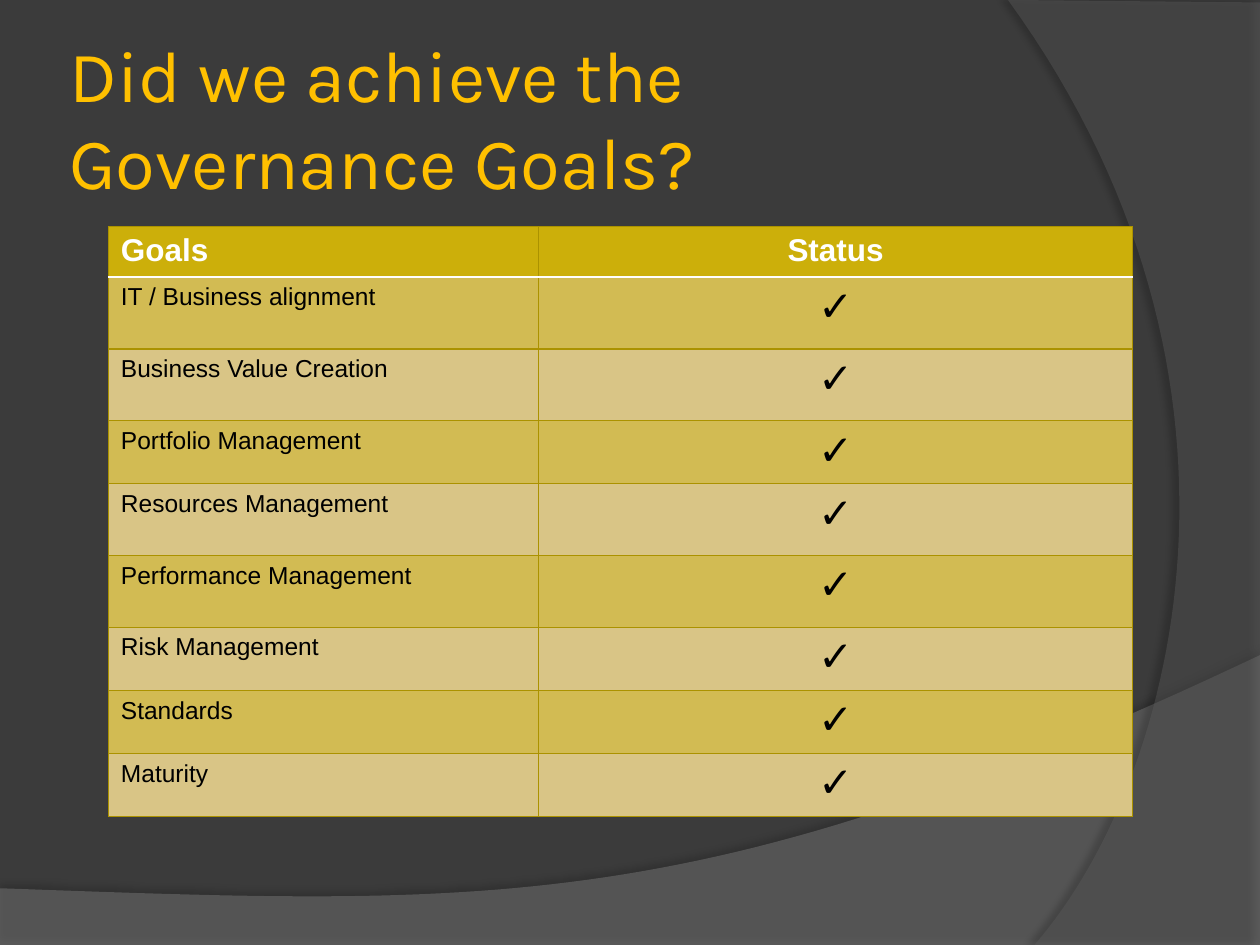
from lxml.etree import SubElement
from pptx import Presentation
from pptx.dml.color import RGBColor
from pptx.enum.text import MSO_ANCHOR, PP_ALIGN
from pptx.oxml import parse_xml
from pptx.oxml.ns import nsdecls, qn
from pptx.util import Inches, Pt

COLORS = {
    "background": "3B3B3B",
    "wave": "7F7F7F",
    "arc": "5E5E5E",
    "shadow": "000000",
    "title": "FFC000",
    "header": "CCAF0A",
    "odd_row": "D2BB53",
    "even_row": "D9C586",
    "border": "AB9200",
    "white": "FFFFFF",
    "black": "000000",
}
GOALS = [
    ("IT / Business alignment", 0.57),
    ("Business Value Creation", 0.57),
    ("Portfolio Management", 0.5),
    ("Resources Management", 0.57),
    ("Performance Management", 0.57),
    ("Risk Management", 0.5),
    ("Standards", 0.5),
    ("Maturity", 0.5),
]
HEADER_HEIGHT = 0.4
COLUMN_SHARES = (0.42, 0.58)


def color(name):
    """Return the named colour."""
    return RGBColor.from_string(COLORS[name])


def bezier(start, first, second, end, steps=60):
    """Return points along a cubic curve."""
    points = []
    for step in range(steps + 1):
        t = step / steps
        weights = ((1 - t) ** 3, 3 * t * (1 - t) ** 2, 3 * t * t * (1 - t), t ** 3)
        points.append(tuple(
            sum(weight * value for weight, value in zip(weights, values))
            for values in zip(start, first, second, end)
        ))
    return points


def add_swoosh(slide, box, points, fill, opacity, shadow):
    """Draw a translucent shadowed outline relative to the box."""
    left, top = box[:2]
    vertices = [(Inches(left + x), Inches(top + y)) for x, y in points]
    builder = slide.shapes.build_freeform(*vertices[0])
    builder.add_line_segments(vertices[1:], close=True)
    shape = builder.convert_to_shape()
    shape.fill.solid()
    shape.fill.fore_color.rgb = color(fill)
    shape.line.fill.background()
    properties = shape._element.spPr
    fill_color = properties.find(qn("a:solidFill"))[0]
    SubElement(fill_color, qn("a:alpha"), val=str(opacity * 1000))
    shadow_opacity, blur, distance, angle = shadow
    properties.append(parse_xml(
        f'<a:effectLst {nsdecls("a")}><a:outerShdw blurRad="{Pt(blur)}" '
        f'dist="{Pt(distance)}" dir="{angle * 60000}" algn="ctr" rotWithShape="0">'
        f'<a:srgbClr val="{COLORS["shadow"]}"><a:alpha val="{shadow_opacity * 1000}"/>'
        f'</a:srgbClr></a:outerShdw></a:effectLst>'
    ))


def add_backdrop(slide, box):
    """Place the wave along the bottom and the arc on the right."""
    left, top, width, height = box
    wave_curve = bezier((10, 0), (5.59, 2.09), (3.91, 1.99), (0, 1.85))
    wave = [(0, 2.3), (10, 2.3)] + wave_curve
    add_swoosh(slide, (left, top + 5.2, width, 2.3), wave, "wave", 45, (35, 4, 3.5, 270))
    arc_curve = bezier((0.21, 7.5), (1.35, 6.19), (2.18, 3), (0, 0))
    arc = [(2, 0.02), (2, 7.5)] + arc_curve
    add_swoosh(slide, (left + 8, top, 2, height), arc, "arc", 40, (45, 4, 4, 180))


def add_run(paragraph, text, size, font, font_color, bold=False):
    """Append a styled run."""
    run = paragraph.add_run()
    run.text = text
    run.font.size = Pt(size)
    run.font.name = font
    run.font.bold = bold
    run.font.color.rgb = color(font_color)


def add_title(slide, box, text):
    """Place the slide title in the box."""
    shape = slide.shapes.add_textbox(*map(Inches, box))
    frame = shape.text_frame
    frame.word_wrap = True
    frame.vertical_anchor = MSO_ANCHOR.MIDDLE
    frame.margin_left = frame.margin_top = frame.margin_bottom = Inches(0.05)
    frame.margin_right = Inches(0.3)
    add_run(frame.paragraphs[0], text, 41.4, "Karla", "title")


def set_borders(cell, borders):
    """Draw the four sides of a cell, each with a colour and a width."""
    properties = cell._tc.get_or_add_tcPr()
    for index, (side, (name, width)) in enumerate(borders.items()):
        properties.insert(index, parse_xml(
            f'<a:ln{side} {nsdecls("a")} w="{Pt(width)}"><a:solidFill>'
            f'<a:srgbClr val="{COLORS[name]}"/></a:solidFill></a:ln{side}>'
        ))


def add_goals_table(slide, box):
    """Place the table of goals and their status in the box."""
    rows = [("Goals", "Status")] + [(goal, "✓") for goal, _ in GOALS]
    heights = [HEADER_HEIGHT] + [height for _, height in GOALS]
    table = slide.shapes.add_table(len(rows), 2, *map(Inches, box)).table
    for column, share in zip(table.columns, COLUMN_SHARES):
        column.width = Inches(box[2] * share)
    for row_index, (texts, height) in enumerate(zip(rows, heights)):
        table.rows[row_index].height = Inches(height)
        header = row_index == 0
        fill = "header" if header else ("even_row", "odd_row")[row_index % 2]
        borders = {side: ("border", 0.75) for side in "LRTB"}
        if row_index < 2:
            borders["B" if header else "T"] = ("white", 1.5)
        for column_index, text in enumerate(texts):
            cell = table.cell(row_index, column_index)
            cell.fill.solid()
            cell.fill.fore_color.rgb = color(fill)
            set_borders(cell, borders)
            paragraph = cell.text_frame.paragraphs[0]
            if column_index == 1:
                paragraph.alignment = PP_ALIGN.CENTER
            size = 18 if header else (14, 24)[column_index]
            add_run(paragraph, text, size, "Arial", "white" if header else "black", header)


def main():
    """Build and save the presentation."""
    presentation = Presentation()
    presentation.slide_width = Inches(10)
    presentation.slide_height = Inches(7.5)
    slide = presentation.slides.add_slide(presentation.slide_layouts[6])
    slide.background.fill.solid()
    slide.background.fill.fore_color.rgb = color("background")
    add_backdrop(slide, (0, 0, 10, 7.5))
    add_title(slide, (0.5, 0.3, 8.17, 1.25), "Did we achieve the Governance Goals?")
    add_goals_table(slide, (0.86, 1.8, 8.13, 4.69))
    presentation.save("out.pptx")


if __name__ == "__main__":
    main()
